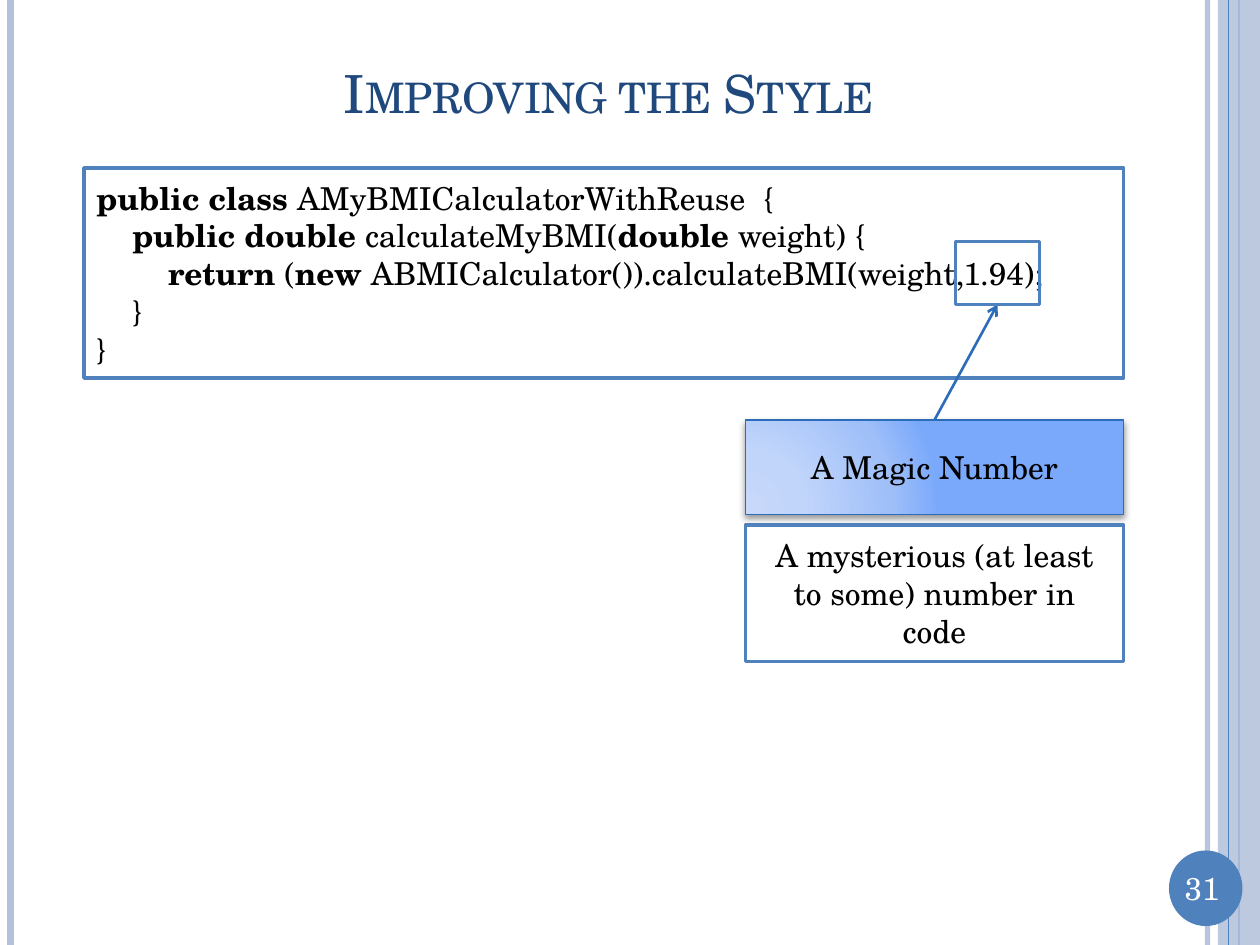
from lxml import etree
from pptx import Presentation
from pptx.dml.color import RGBColor
from pptx.enum import shapes, text
from pptx.oxml import parse_xml
from pptx.oxml.ns import nsdecls, qn
from pptx.util import Pt

FONT = "TeX Gyre Schola"
BLUE, PALE, DEEP = "4F81BD", "B3C1DB", "2C6CB9"
INDENT = 20.5
RIGHT_EDGE_LINES = [(690, PALE, 3, 93), (6, PALE, 4.5, 100), (708, BLUE, 1.5, 100)]

# Each line of code: indent level, then (text, bold) runs
CODE = [
    (0, [("public class ", True), ("AMyBMICalculatorWithReuse  {", False)]),
    (1, [("public double ", True), ("calculateMyBMI(", False),
         ("double", True), (" weight) {", False)]),
    (2, [("return", True), (" (", False), ("new ", True),
         ("ABMICalculator()).calculateBMI(weight,1.94);", False)]),
    (1, [("}", False)]),
    (0, [("}", False)]),
]


def color(value):
    return RGBColor.from_string(value)


def set_alpha(fill_parent, percent):
    """Make the solid colour below an element partly transparent."""
    if percent < 100:
        srgb = fill_parent.find(".//" + qn("a:srgbClr"))
        etree.SubElement(srgb, qn("a:alpha")).set("val", str(percent * 1000))


def add_line(slide, start, end, line_color, width, alpha=100, arrow=False):
    line = slide.shapes.add_connector(
        shapes.MSO_CONNECTOR.STRAIGHT, *(Pt(value) for value in start + end))
    line.line.color.rgb = color(line_color)
    line.line.width = Pt(width)
    properties = line._element.spPr
    outline = properties.find(qn("a:ln"))
    set_alpha(outline, alpha)
    if arrow:
        etree.SubElement(outline, qn("a:tailEnd")).set("type", "arrow")
    etree.SubElement(properties, qn("a:effectLst"))


def add_box(slide, bounds, fill=None, line=None, width=2, alpha=100,
            kind=shapes.MSO_SHAPE.RECTANGLE):
    shape = slide.shapes.add_shape(kind, *map(Pt, bounds))
    shape.shadow.inherit = False
    if fill:
        shape.fill.solid()
        shape.fill.fore_color.rgb = color(fill)
        set_alpha(shape._element.spPr, alpha)
    else:
        shape.fill.background()
    if line:
        shape.line.color.rgb = color(line)
        shape.line.width = Pt(width)
    else:
        shape.line.fill.background()
    return shape


def format_paragraph(paragraph, size=18, text_color="000000",
                     align=text.PP_ALIGN.CENTER):
    paragraph.alignment = align
    paragraph.font.name = FONT
    paragraph.font.size = Pt(size)
    paragraph.font.color.rgb = color(text_color)


def write_text(shape, words, text_color="000000"):
    frame = shape.text_frame
    frame.word_wrap = True
    frame.text = words
    format_paragraph(frame.paragraphs[0], text_color=text_color)


def write_code(shape, lines):
    frame = shape.text_frame
    frame.word_wrap = True
    for number, (level, runs) in enumerate(lines):
        paragraph = frame.add_paragraph() if number else frame.paragraphs[0]
        format_paragraph(paragraph, align=text.PP_ALIGN.LEFT)
        paragraph._p.get_or_add_pPr().set("marL", str(Pt(level * INDENT)))
        for words, bold in runs:
            run = paragraph.add_run()
            run.text = words
            run.font.bold = bold


def add_glow_and_shadow(shape):
    """Give a shape a radial blue gradient and a soft shadow below it."""
    stops = [(0, "C7D8FB"), (30, "C1D5FA"), (75, "9FBFF9"), (100, "7AA9FB")]
    stop_xml = "".join(
        f'<a:gs pos="{position * 1000}"><a:srgbClr val="{value}"/></a:gs>'
        for position, value in stops)
    gradient = parse_xml(
        f'<a:gradFill {nsdecls("a")} rotWithShape="1"><a:gsLst>{stop_xml}</a:gsLst>'
        '<a:path path="circle"><a:fillToRect l="5000" t="100000" r="120000"'
        ' b="10000"/></a:path></a:gradFill>')
    shadow = parse_xml(
        f'<a:outerShdw {nsdecls("a")} blurRad="{Pt(4)}" dist="{Pt(2)}" dir="5400000"'
        ' rotWithShape="0"><a:srgbClr val="000000"><a:alpha val="40000"/>'
        '</a:srgbClr></a:outerShdw>')
    properties = shape._element.spPr
    properties.replace(properties.find(qn("a:solidFill")), gradient)
    properties.find(qn("a:effectLst")).append(shadow)


def add_frame(slide):
    """Draw the edge lines, the right band and the slide number."""
    for x, line_color, width, alpha in RIGHT_EDGE_LINES:
        add_line(slide, (x, 0), (x, 540), line_color, width, alpha)
    add_box(slide, (696, 0, 24, 540), PALE, alpha=87)
    add_line(slide, (702, 0), (702, 540), BLUE, 0.75)
    add_box(slide, (668, 486, 42, 43.2), BLUE, kind=shapes.MSO_SHAPE.OVAL)
    number = slide.shapes.add_textbox(Pt(666), Pt(493.2), Pt(42), Pt(28.8))
    write_text(number, "31", "FFFFFF")


def set_title(slide, words):
    title = slide.shapes.title
    title.left, title.top, title.width, title.height = map(Pt, (36, 21.6, 624, 62.4))
    frame = title.text_frame
    frame.text = words
    frame.vertical_anchor = text.MSO_ANCHOR.MIDDLE
    paragraph = frame.paragraphs[0]
    format_paragraph(paragraph, 30, "1F497D")
    paragraph.runs[0]._r.get_or_add_rPr().set("cap", "small")


def main():
    presentation = Presentation()
    presentation.slide_width, presentation.slide_height = Pt(720), Pt(540)
    slide = presentation.slides.add_slide(presentation.slide_layouts[5])
    add_frame(slide)
    set_title(slide, "Improving the Style")
    write_code(add_box(slide, (48, 96, 594, 120), "FFFFFF", BLUE), CODE)

    label = add_box(slide, (426, 240, 216, 54), "7AA9FB", DEEP, 1)
    add_glow_and_shadow(label)
    write_text(label, "A Magic Number")
    add_line(slide, (534, 240), (570, 174), DEEP, 1.5, arrow=True)
    add_box(slide, (546, 138, 48, 36), line=BLUE)
    definition = add_box(slide, (426, 300, 216, 78), "FFFFFF", BLUE)
    write_text(definition, "A mysterious (at least to some) number in code")
    presentation.save("out.pptx")


if __name__ == "__main__":
    main()
